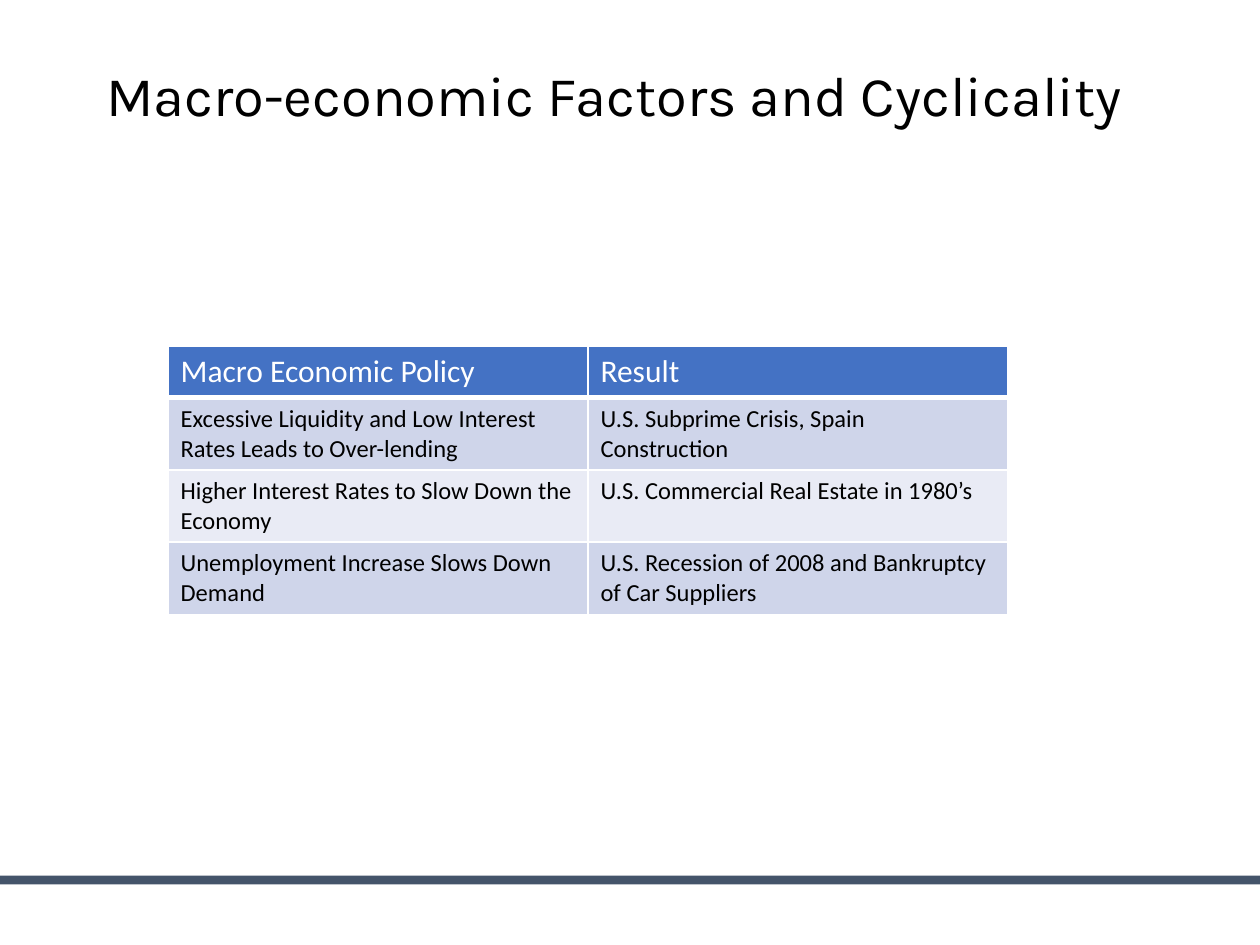
from lxml import etree
from pptx import Presentation
from pptx.dml.color import RGBColor
from pptx.enum import shapes, text
from pptx.oxml.ns import qn
from pptx.util import Pt

COLORS = {
    "text": "000000",
    "white": "FFFFFF",
    "bar": "44546A",
    "header": "4472C4",
    "band_dark": "CFD5EA",
    "band_light": "E9EBF5",
}
ROWS = [
    ("Macro Economic Policy", "Result"),
    ("Excessive Liquidity and Low Interest Rates Leads to Over-lending",
     "U.S. Subprime Crisis, Spain Construction"),
    ("Higher Interest Rates to Slow Down the Economy",
     "U.S. Commercial Real Estate in 1980’s"),
    ("Unemployment Increase Slows Down Demand",
     "U.S. Recession of 2008 and Bankruptcy of Car Suppliers"),
]


def rgb(name):
    return RGBColor.from_string(COLORS[name])


def set_font(p, name, size, color):
    p.font.name = name
    p.font.size = Pt(size)
    p.font.bold = False
    p.font.color.rgb = rgb(color)


def add_bar(s):
    sp = s.shapes.add_shape(shapes.MSO_SHAPE.RECTANGLE, 0, Pt(500.4), Pt(720), Pt(5))
    sp.shadow.inherit = False
    sp.fill.solid()
    sp.fill.fore_color.rgb = rgb("bar")
    sp.line.fill.background()


def set_title(s, title):
    sp = s.shapes.title
    sp.left, sp.top, sp.width, sp.height = Pt(49.7), Pt(28.8), Pt(603.4), Pt(54.7)
    tf = sp.text_frame
    tf.text = title
    tf.word_wrap = True
    tf.auto_size = text.MSO_AUTO_SIZE.NONE
    tf.vertical_anchor = text.MSO_ANCHOR.MIDDLE
    p = tf.paragraphs[0]
    p.alignment = text.PP_ALIGN.CENTER
    p.line_spacing = 0.9
    set_font(p, "Karla", 32, "text")


def set_borders(cell, bottom_width):
    """Draw white borders; call before the fill, which must follow them in the XML."""
    tc_pr = cell._tc.get_or_add_tcPr()
    for tag, width in (("lnL", 1), ("lnR", 1), ("lnT", 1), ("lnB", bottom_width)):
        ln = etree.SubElement(tc_pr, qn(f"a:{tag}"), w=str(Pt(width)))
        fill = etree.SubElement(ln, qn("a:solidFill"))
        etree.SubElement(fill, qn("a:srgbClr"), val=COLORS["white"])


def add_policy_table(s):
    header_height, row_height = 29.2, 41
    height = header_height + row_height * (len(ROWS) - 1)
    table = s.shapes.add_table(len(ROWS), 2, Pt(96), Pt(198), Pt(480), Pt(height)).table
    for i, row in enumerate(ROWS):
        is_header = i == 0
        table.rows[i].height = Pt(header_height if is_header else row_height)
        band = "header" if is_header else "band_dark" if i % 2 else "band_light"
        for j, content in enumerate(row):
            cell = table.cell(i, j)
            set_borders(cell, 3 if is_header else 1)
            cell.fill.solid()
            cell.fill.fore_color.rgb = rgb(band)
            cell.text = content
            set_font(cell.text_frame.paragraphs[0], "Calibri",
                     18 if is_header else 14, "white" if is_header else "text")


def main():
    prs = Presentation()
    prs.slide_width, prs.slide_height = Pt(720), Pt(540)
    s = prs.slides.add_slide(prs.slide_layouts[5])
    add_bar(s)
    set_title(s, "Macro-economic Factors and Cyclicality")
    add_policy_table(s)
    prs.save("out.pptx")


if __name__ == "__main__":
    main()
